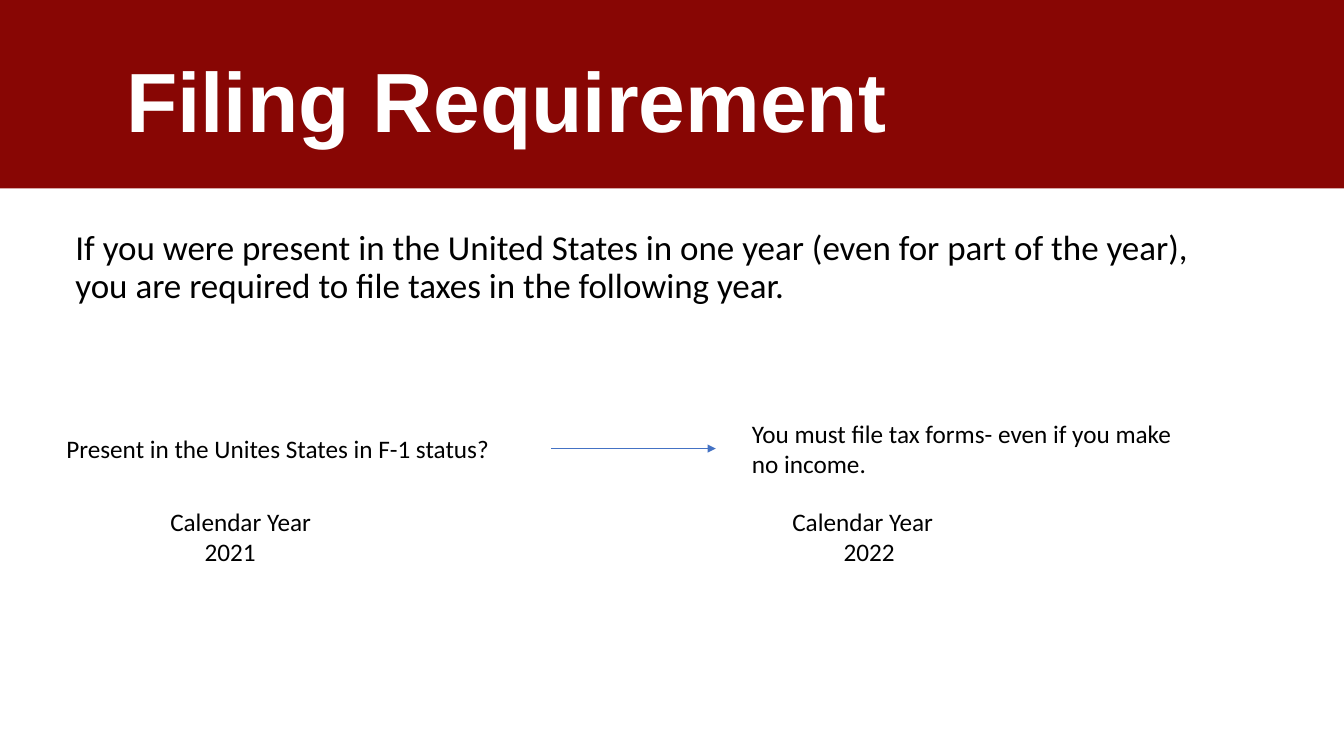
from lxml import etree
from pptx import Presentation
from pptx.dml.color import RGBColor
from pptx.enum.shapes import MSO_CONNECTOR, MSO_SHAPE
from pptx.enum.text import MSO_ANCHOR, PP_ALIGN
from pptx.oxml.ns import qn
from pptx.util import Inches, Pt

DARK_RED = RGBColor(0x88, 0x06, 0x04)
WHITE = RGBColor(0xFF, 0xFF, 0xFF)
BLACK = RGBColor(0x00, 0x00, 0x00)
BLUE = RGBColor(0x44, 0x72, 0xC4)
LEFT = PP_ALIGN.LEFT
MIDDLE = MSO_ANCHOR.MIDDLE
RECTANGLE = MSO_SHAPE.RECTANGLE
STRAIGHT = MSO_CONNECTOR.STRAIGHT


def write_text(paragraph, text, size=18, font="Calibri", color=BLACK,
               bold=False, line_spacing=1.0, indent=0):
    paragraph.alignment = LEFT
    paragraph.line_spacing = line_spacing
    if indent:
        paragraph._p.get_or_add_pPr().set("marL", str(Inches(indent)))
    run = paragraph.add_run()
    run.text = text
    run.font.size = Pt(size)
    run.font.name = font
    run.font.bold = bold
    run.font.color.rgb = color


presentation = Presentation()
presentation.slide_width = Inches(13.33)
presentation.slide_height = Inches(7.5)
slide = presentation.slides.add_slide(presentation.slide_layouts[5])

band = slide.shapes.add_shape(RECTANGLE, 0, 0, presentation.slide_width, Inches(1.87))
band.shadow.inherit = False
band.fill.solid()
band.fill.fore_color.rgb = DARK_RED
band.line.fill.background()

title = slide.shapes.title
title.element.addprevious(band.element)
title.left, title.top = Inches(1.15), Inches(0.32)
title.width, title.height = Inches(11.27), Inches(1.45)
title.text_frame.vertical_anchor = MIDDLE
write_text(title.text_frame.paragraphs[0], "Filing Requirement", size=60,
           font="Arial", color=WHITE, bold=True, line_spacing=0.9)

rule_format = {"size": 25, "line_spacing": 0.9}
text_boxes = [
    (0.65, 2.24, 11.77, 4.76, [
        ("If you were present in the United States in one year (even for part of the year), "
         "you are required to file taxes in the following year.", rule_format)]),
    (1.59, 4.97, 1.68, 0.71, [("Calendar Year", {}), ("2021", {"indent": 0.34})]),
    (0.56, 4.25, 4.59, 0.4, [("Present in the Unites States in F-1 status?", {})]),
    (7.36, 4.1, 4.59, 0.71, [("You must file tax forms- even if you make no income.", {})]),
    (7.76, 4.97, 2.23, 0.71, [("Calendar Year", {}), ("2022", {"indent": 0.51})]),
]
for left, top, width, height, lines in text_boxes:
    text_box = slide.shapes.add_textbox(Inches(left), Inches(top), Inches(width), Inches(height))
    text_frame = text_box.text_frame
    text_frame.word_wrap = True
    for index, (text, text_format) in enumerate(lines):
        paragraph = text_frame.add_paragraph() if index else text_frame.paragraphs[0]
        write_text(paragraph, text, **text_format)

arrow = slide.shapes.add_connector(STRAIGHT, Inches(5.47), Inches(4.45), Inches(7.1), Inches(4.45))
arrow.line.color.rgb = BLUE
arrow.line.width = Pt(0.5)
etree.SubElement(arrow.line._get_or_add_ln(), qn("a:tailEnd"), type="triangle")
etree.SubElement(arrow.element.spPr, qn("a:effectLst"))

presentation.save("out.pptx")
